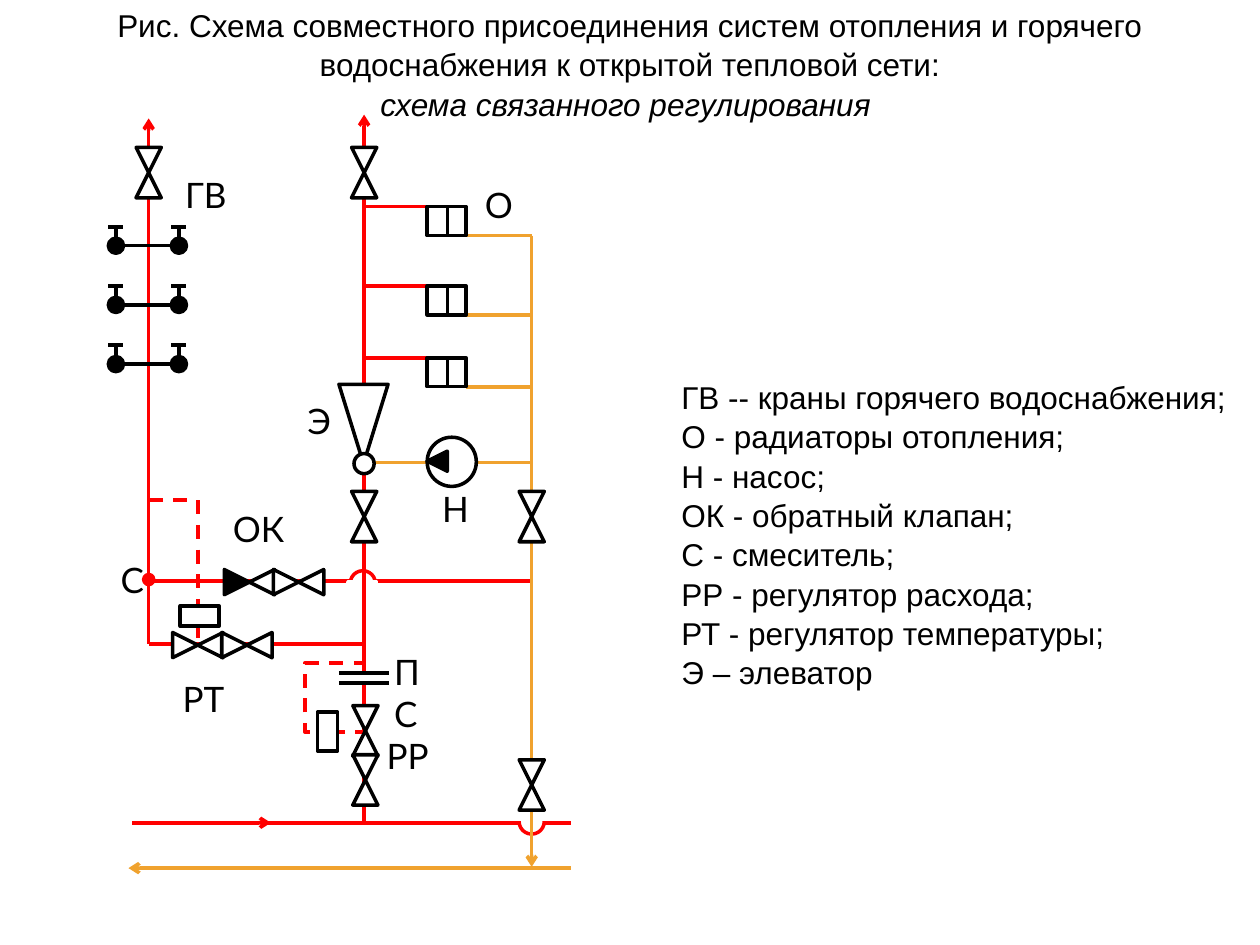
from lxml.etree import SubElement
from pptx import Presentation
from pptx.dml.color import RGBColor
from pptx.enum.dml import MSO_LINE_DASH_STYLE as Dash
from pptx.enum.shapes import MSO_CONNECTOR_TYPE as Link, MSO_SHAPE as Kind
from pptx.enum.text import MSO_ANCHOR as Anchor, MSO_AUTO_SIZE as Fit, PP_ALIGN as Align
from pptx.oxml.ns import qn
from pptx.util import Cm, Pt

COLORS = {"hot": "FF0000", "return": "F0A22E", "ink": "000000", "paper": "FFFFFF"}
UNIT = 2.54  # centimetres in one drawing unit

# Wording
TITLE = [
    ("Рис. Схема совместного присоединения систем отопления и горячего "
     "водоснабжения к открытой тепловой сети:", False),
    ("схема связанного регулирования ", True),
]
LEGEND = [
    "ГВ -- краны горячего водоснабжения;", "О - радиаторы отопления;", "Н - насос;",
    "ОК - обратный клапан;", "С - смеситель;", "РР - регулятор расхода;",
    "РТ - регулятор температуры;", "Э – элеватор",
]
LABELS = [  # text, left, top, width
    ("РТ", 1.35, 5.33, 0.55), ("С", 0.86, 4.38, 0.55), ("ГВ", 1.37, 1.33, 0.55),
    ("РР", 2.97, 5.78, 0.55), ("Э", 2.34, 3.12, 0.55), ("О", 3.75, 1.41, 0.55),
    ("ОК", 1.75, 3.98, 0.65), ("ПС", 3.03, 5.11, 0.55), ("Н", 3.41, 3.82, 0.55),
]

# Axes of the three risers, and levels of the main pipes
TAP_X, HEAT_X, BACK_X = 1.18, 2.89, 4.22
SUPPLY_Y, RETURN_Y, MIX_Y, BYPASS_Y, PUMP_Y = 6.53, 6.89, 4.61, 5.11, 3.67

RADIATORS = [1.64, 2.27, 2.84]
TAPS = [1.95, 2.42, 2.89]
LOWER_PIPES = [  # x1, y1, x2, y2, colour, arrow
    (2.08, SUPPLY_Y, 4.53, SUPPLY_Y, "hot", False),
    (1.05, SUPPLY_Y, 2.15, SUPPLY_Y, "hot", True),
    (4.53, RETURN_Y, 1.02, RETURN_Y, "return", True),
    (TAP_X, BYPASS_Y, TAP_X, 0.94, "hot", True),
    (TAP_X, MIX_Y, BACK_X, MIX_Y, "hot", False),
    (TAP_X, BYPASS_Y, HEAT_X, BYPASS_Y, "hot", False),
    (2.97, PUMP_Y, BACK_X, PUMP_Y, "return", False),
]
UPPER_PIPES = [
    (BACK_X, 1.87, BACK_X, 6.88, "return", True),
    (HEAT_X, 6.54, HEAT_X, 0.91, "hot", True),
]
VERTICAL_VALVES = [
    (TAP_X, 1.37), (HEAT_X, 1.37), (HEAT_X, 4.1), (2.9, 5.8), (2.9, 6.19),
    (BACK_X, 4.1), (BACK_X, 6.23),
]
HORIZONTAL_VALVES = [  # centre, colour of the left half
    (1.57, 5.12, "paper"), (1.96, 5.12, "paper"),
    (1.98, 4.62, "ink"), (2.37, 4.62, "paper"),
]

deck = Presentation()
deck.slide_width, deck.slide_height = Cm(25.4), Cm(19.05)
page = deck.slides.add_slide(deck.slide_layouts[5])


def size(value):
    return Cm(value * UNIT)


def color(name):
    return RGBColor.from_string(COLORS[name])


def draw_outline(line, name, dashed=False):
    line.color.rgb = color(name)
    line.width = Pt(2)
    if dashed:
        line.dash_style = Dash.DASH


def add_pipe(x1, y1, x2, y2, name="ink", arrow=False):
    pipe = page.shapes.add_connector(Link.STRAIGHT, *map(size, (x1, y1, x2, y2)))
    draw_outline(pipe.line, name)
    if arrow:
        SubElement(pipe.line._get_or_add_ln(), qn("a:tailEnd"), type="arrow")
    SubElement(pipe._element.spPr, qn("a:effectLst"))


def style_shape(shape, fill, line, dashed=False):
    shape.shadow.inherit = False
    if fill:
        shape.fill.solid()
        shape.fill.fore_color.rgb = color(fill)
    else:
        shape.fill.background()
    draw_outline(shape.line, line, dashed)


def add_part(kind, left, top, width, height, fill="paper", line="ink", turn=0, dashed=False):
    part = page.shapes.add_shape(kind, *map(size, (left, top, width, height)))
    part.rotation = turn
    style_shape(part, fill, line, dashed)


def add_valve(x, y, upright=True, first="paper"):
    for side, fill in ((-1, first), (1, "paper")):
        dx, dy = (0, side * 0.1) if upright else (side * 0.1, 0)
        turn = (180 if side < 0 else 0) if upright else (90 if side < 0 else 270)
        add_part(Kind.ISOSCELES_TRIANGLE, x + dx - 0.1, y + dy - 0.1, 0.2, 0.2, fill, turn=turn)


def add_hop(x, y, up):
    """Half circle where one pipe passes another."""
    add_part(Kind.OVAL, x - 0.1, y - 0.1 + (0.02 if up else 0), 0.2, 0.2, "paper", "hot")
    mask_top, mask_height = (y + 0.01, 0.12) if up else (y - 0.1, 0.08)
    add_part(Kind.RECTANGLE, x - 0.12, mask_top, 0.23, mask_height, "paper", "paper")


def write(frame, lines, font, points, spacing=None, align=Align.LEFT):
    frame.word_wrap = True
    for index, (text, italic) in enumerate(lines):
        para = frame.paragraphs[0] if index == 0 else frame.add_paragraph()
        para.alignment = align
        if spacing:
            para.line_spacing = spacing
        span = para.add_run()
        span.text = text
        look = {"name": font, "size": Pt(points), "italic": italic, "bold": False}
        for key, value in look.items():
            setattr(span.font, key, value)
        span.font.color.rgb = color("ink")


def add_text(lines, left, top, width, height, *look):
    box = page.shapes.add_textbox(*map(size, (left, top, width, height)))
    write(box.text_frame, lines, *look)
    box.text_frame.auto_size = Fit.SHAPE_TO_FIT_TEXT


# Title and legend
title = page.shapes.title
place = {"left": 0, "top": 0, "width": 10, "height": 1.01}
for side, value in place.items():
    setattr(title, side, size(value))
write(title.text_frame, TITLE, "Arial", 18, 1.04, Align.CENTER)
title.text_frame.vertical_anchor = Anchor.MIDDLE
add_text([(text, False) for text in LEGEND], 5.31, 2.94, 4.69, 2.52, "Arial", 18, 1.04)

# Pipes, with hops at the two crossings
for pipe in LOWER_PIPES:
    add_pipe(*pipe)
add_hop(BACK_X, SUPPLY_Y - 0.01, up=False)
add_hop(2.88, MIX_Y, up=True)
for pipe in UPPER_PIPES:
    add_pipe(*pipe)

# Radiators
for top in RADIATORS:
    add_pipe(3.5, top, HEAT_X, top, "hot")
    add_pipe(BACK_X, top + 0.23, 3.7, top + 0.23, "return")
    add_part(Kind.RECTANGLE, 3.39, top, 0.31, 0.23, None)
    add_pipe(3.55, top, 3.55, top + 0.23)

# Hot water taps
for y in TAPS:
    add_pipe(0.97, y, 1.36, y)
    for x in (0.92, 1.42):
        add_part(Kind.OVAL, x - 0.06, y - 0.06, 0.12, 0.12, "ink")
        add_pipe(x, y - 0.14, x, y - 0.06)
        add_pipe(x - 0.06, y - 0.15, x + 0.06, y - 0.15)

# Regulator impulse lines and their drives
builder = page.shapes.build_freeform(size(TAP_X), size(3.97))
builder.add_line_segments([(size(1.57), size(3.97)), (size(1.57), size(BYPASS_Y))], close=False)
style_shape(builder.convert_to_shape(), None, "hot", dashed=True)
add_part(Kind.RECTANGLE, 1.43, 4.81, 0.31, 0.16)
add_part(Kind.RECTANGLE, 2.42, 5.26, 0.47, 0.55, None, "hot", dashed=True)
add_part(Kind.RECTANGLE, 2.52, 5.65, 0.16, 0.31)

# Valves
for x, y in VERTICAL_VALVES:
    add_valve(x, y)
for x, y, first in HORIZONTAL_VALVES:
    add_valve(x, y, False, first)

# Elevator, mixer, orifice plate and pump
add_part(Kind.ISOSCELES_TRIANGLE, 2.69, 3.05, 0.39, 0.63, turn=180)
add_part(Kind.OVAL, 2.81, 3.6, 0.16, 0.16)
add_part(Kind.OVAL, 1.14, 4.56, 0.08, 0.08, "hot", "hot")
add_part(Kind.RECTANGLE, 2.86, 5.36, 0.04, 0.04, "paper", "paper")
for y in (5.34, 5.42):
    add_pipe(2.69, y, 3.09, y)
add_part(Kind.OVAL, 3.39, 3.47, 0.39, 0.39)
add_part(Kind.ISOSCELES_TRIANGLE, 3.39, 3.58, 0.16, 0.16, "ink", turn=270)

# Labels
for text, left, top, width in LABELS:
    add_text([(text, False)], left, top, width, 0.44, "Lato", 20)

deck.save("out.pptx")
